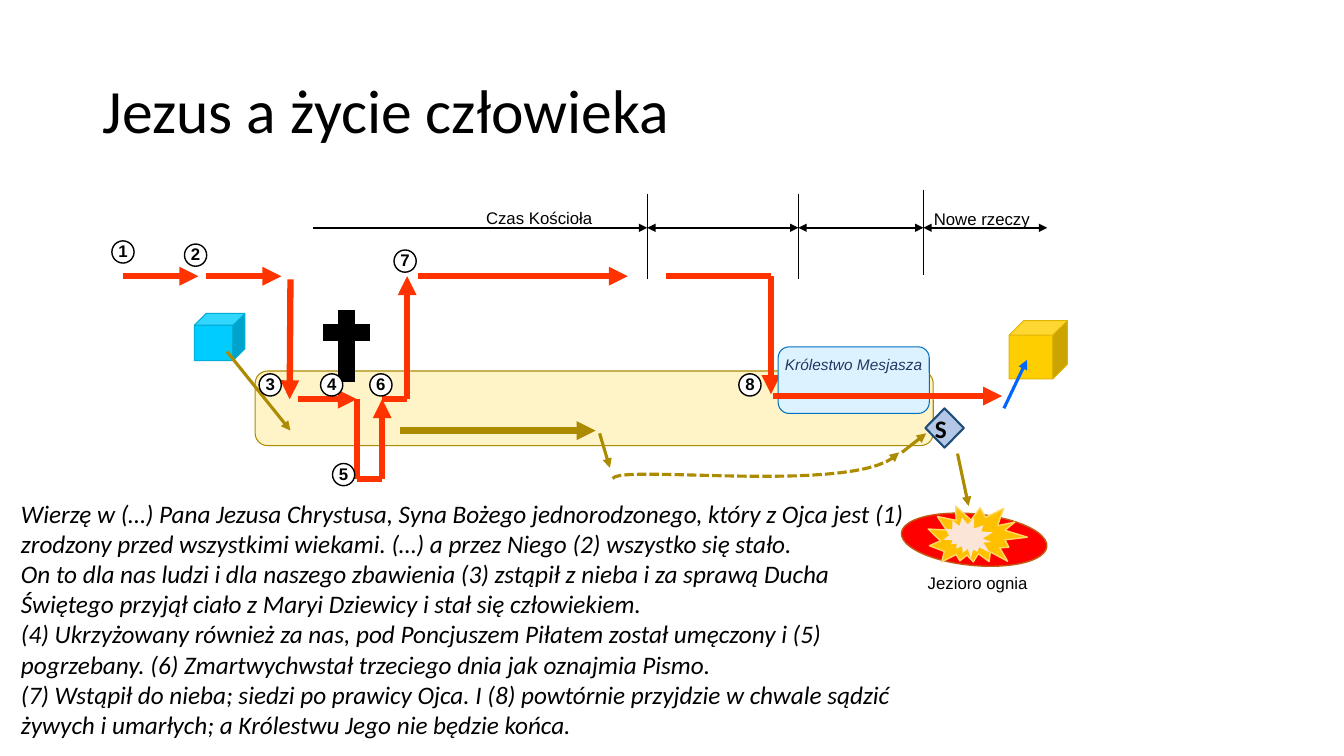
import pptx
import pptx.util
import pptx.dml.color
import pptx.enum.dml
import pptx.enum.shapes
import pptx.enum.text
import pptx.oxml.ns
import lxml.etree

Cm = pptx.util.Cm
Pt = pptx.util.Pt
SHAPE = pptx.enum.shapes.MSO_SHAPE
ALIGN = pptx.enum.text.PP_ALIGN
ANCHOR = pptx.enum.text.MSO_ANCHOR

COLORS = {
    "black": "000000", "white": "FFFFFF", "way": "FF3300", "road": "AD8B00",
    "earth": "FFF4C7", "kingdom": "DDF2FF", "kingdom_line": "0070C0", "navy": "203864",
    "judgment": "B4C7E7", "judgment_line": "1F4E79", "lake": "FF0000", "lake_line": "C55A11",
    "flame": "FFC000", "flame_line": "FFD966", "glow": "FBE5D6", "gold": "FFCE00",
    "gold_line": "E0B400", "sky": "00CCFF", "sky_line": "00AED8", "blue": "0066FF",
}
CREDO = [
    "Wierzę w (…) Pana Jezusa Chrystusa, Syna Bożego jednorodzonego, który z Ojca jest (1) "
    "zrodzony przed wszystkimi wiekami. (…) a przez Niego (2) wszystko się stało.",
    "On to dla nas ludzi i dla naszego zbawienia (3) zstąpił z nieba i za sprawą Ducha "
    "Świętego przyjął ciało z Maryi Dziewicy i stał się człowiekiem.",
    "(4) Ukrzyżowany również za nas, pod Poncjuszem Piłatem został umęczony i (5) "
    "pogrzebany. (6) Zmartwychwstał trzeciego dnia jak oznajmia Pismo.",
    "(7) Wstąpił do nieba; siedzi po prawicy Ojca. I (8) powtórnie przyjdzie w chwale sądzić "
    "żywych i umarłych; a Królestwu Jego nie będzie końca.",
]


def rgb(name):
    return pptx.dml.color.RGBColor.from_string(COLORS[name])


def style_line(line, color, width, ends=()):
    line.color.rgb = rgb(color)
    line.width = Pt(width)
    ln = line._get_or_add_ln()
    for end in ends:
        lxml.etree.SubElement(ln, pptx.oxml.ns.qn("a:" + end), type="triangle")


def add_line(s, x, y, start, end, color, width, ends=("tailEnd",)):
    c = s.shapes.add_connector(
        pptx.enum.shapes.MSO_CONNECTOR.STRAIGHT,
        Cm(x + start[0]), Cm(y + start[1]), Cm(x + end[0]), Cm(y + end[1]))
    style_line(c.line, color, width, ends)
    lxml.etree.SubElement(c._element.spPr, pptx.oxml.ns.qn("a:effectLst"))


def add_block(s, kind, x, y, w, h, fill, line=None, width=1, rotation=0):
    sp = s.shapes.add_shape(kind, Cm(x), Cm(y), Cm(w), Cm(h))
    sp.shadow.inherit = False
    sp.rotation = rotation
    sp.fill.solid()
    sp.fill.fore_color.rgb = rgb(fill)
    if line:
        style_line(sp.line, line, width)
    else:
        sp.line.fill.background()
    return sp


def format_text(tf, size, font="Arial", color="black", align=ALIGN.CENTER,
                anchor=ANCHOR.MIDDLE, margin=None, wrap=True, bold=False, italic=False):
    tf.word_wrap = wrap
    tf.vertical_anchor = anchor
    if margin is not None:
        tf.margin_left = tf.margin_right = tf.margin_top = tf.margin_bottom = Cm(margin)
    for p in tf.paragraphs:
        p.alignment = align
        for r in p.runs:
            r.font.size = Pt(size)
            r.font.name = font
            r.font.bold = bold
            r.font.italic = italic
            r.font.color.rgb = rgb(color)


def add_label(s, x, y, w, text):
    tf = s.shapes.add_textbox(Cm(x), Cm(y), Cm(w), Cm(0.66)).text_frame
    tf.text = text
    format_text(tf, 12, margin=0.08)


def add_title(s, x, y, w, h):
    sp = s.shapes.title
    sp.left, sp.top, sp.width, sp.height = Cm(x), Cm(y), Cm(w), Cm(h)
    sp.text_frame.text = "Jezus a życie człowieka"
    format_text(sp.text_frame, 44, "Calibri", align=ALIGN.LEFT)
    sp.text_frame.paragraphs[0].line_spacing = 0.9


def add_credo(s, x, y, w, h):
    tf = s.shapes.add_textbox(Cm(x), Cm(y), Cm(w), Cm(h)).text_frame
    tf.text = "\n".join(CREDO)
    format_text(tf, 18, "Calibri", align=ALIGN.LEFT, anchor=ANCHOR.TOP, italic=True)


def add_human_road(s, x, y, w, h):
    add_block(s, SHAPE.ROUNDED_RECTANGLE, x, y, w, h, "earth", "road", 0.75)
    add_line(s, x, y, (3.65, 1.5), (8.58, 1.5), "road", 4.5)
    a, b, c, d = (9.01, 2.71), (9.19, 2.33), (15.34, 3.15), (16.23, 2.05)
    steps = 24
    curve = []
    for i in range(steps + 1):
        t = i / steps
        u = 1 - t
        px, py = (u**3 * a[k] + 3 * u * u * t * b[k] + 3 * u * t * t * c[k] + t**3 * d[k]
                  for k in (0, 1))
        curve.append((Cm(x + px), Cm(y + py)))
    fb = s.shapes.build_freeform(*curve[0])
    fb.add_line_segments(curve[1:], close=False)
    sp = fb.convert_to_shape()
    sp.shadow.inherit = False
    sp.fill.background()
    sp.line.dash_style = pptx.enum.dml.MSO_LINE.SQUARE_DOT
    style_line(sp.line, "road", 2.25, ("tailEnd",))
    sp = add_block(s, SHAPE.DIAMOND, x + 16.89, y + 0.94, 0.97, 0.99,
                   "judgment", "judgment_line", 1.5)
    sp.text_frame.text = "S"
    format_text(sp.text_frame, 18, "Calibri", align=ALIGN.LEFT, margin=0, bold=True)
    for start, end in [((8.68, 1.57), (8.94, 2.44)), ((16.3, 2.05), (16.91, 1.57)),
                       ((17.7, 2.08), (17.98, 3.4))]:
        add_line(s, x, y, start, end, "road", 2.25)


def add_timeline(s, x, y):
    axis = 0.96
    marks = [0, 8.41, 12.22, 15.37, 18.49]
    for i, (left, right) in enumerate(zip(marks, marks[1:])):
        ends = ("headEnd", "tailEnd") if i else ("tailEnd",)
        add_line(s, x, y, (left, axis), (right, axis), "black", 1.5, ends)
    for mark, top in zip(marks[1:4], (0.1, 0.1, 0)):
        add_line(s, x, y, (mark, top), (mark, top + 2.16), "black", 0.5, ())
    add_label(s, x + 3.86, y + 0.38, 3.66, "Czas Kościoła")
    add_label(s, x + marks[3], y + 0.4, 2.95, "Nowe rzeczy")


def add_lake(s, x, y, w, h):
    add_block(s, SHAPE.FLOWCHART_CONNECTOR, x, y, w, h, "lake", "lake_line", 1, 5.4)
    add_block(s, SHAPE.EXPLOSION2, x + 0.68, y - 0.3, 2.46, 1.73,
              "flame", "flame_line", 1, 16.2)
    add_block(s, SHAPE.EXPLOSION2, x + 1.12, y + 0.03, 1.19, 1.14, "glow", rotation=56.2)
    add_label(s, x + 0.1, y + 1.4, 3.66, "Jezioro ognia")


def add_world(s, x, y, w, h, color, start, end, arrow):
    add_block(s, SHAPE.CUBE, x, y, w, h, color, color + "_line", 0.75)
    add_line(s, x, y, start, end, arrow, 2.25)


def add_way(s, x, y):
    ground, grave = 3.1, 5.11
    arrows = [
        ((0, 0), (1.9, 0)), ((2.08, 0), (3.99, 0)), ((4.22, 0.08), (4.2, ground)),
        ((4.42, ground), (5.89, ground)), ((6.53, grave), (6.53, ground)),
        ((7.16, ground), (7.16, 0)), ((7.44, 0), (12.72, 0)), ((16.33, 0), (16.33, 2.97)),
    ]
    plain = [
        ((5.89, ground), (5.89, grave)), ((5.89, grave), (6.53, grave)),
        ((6.53, ground), (7.16, ground)), ((13.69, 0), (16.33, 0)),
    ]
    for start, end in arrows:
        add_line(s, x, y, start, end, "way", 4.5)
    for start, end in plain:
        add_line(s, x, y, start, end, "way", 4.5, ())


def add_kingdom(s, x, y, w, h):
    sp = add_block(s, SHAPE.ROUNDED_RECTANGLE, x, y, w, h, "kingdom", "kingdom_line", 0.75)
    sp.text_frame.text = "Królestwo Mesjasza"
    format_text(sp.text_frame, 11, color="navy", anchor=ANCHOR.TOP, wrap=False, italic=True)
    add_line(s, x, y, (-0.13, 1.24), (w + 1.83, 1.24), "way", 4.5)


def add_cross(s, x, y, w, h):
    add_line(s, x, y, (0, 0.58), (w, 0.58), "black", 12, ())
    add_line(s, x, y, (w / 2, h), (w / 2, 0), "black", 12, ())


def add_badges(s, x, y):
    spots = [(0, 0), (1.83, 0.08), (3.71, 3.35), (5.26, 3.35),
             (5.56, 5.61), (6.5, 3.35), (7.11, 0.23), (15.8, 3.35)]
    for number, (dx, dy) in enumerate(spots, 1):
        sp = add_block(s, SHAPE.OVAL, x + dx, y + dy, 0.56, 0.56, "white", "black", 1)
        sp.text_frame.text = str(number)
        format_text(sp.text_frame, 12, wrap=False, bold=True)
        sp.text_frame.paragraphs[0].line_spacing = 0.9


def main():
    prs = pptx.Presentation()
    prs.slide_width, prs.slide_height = Cm(33.87), Cm(19.05)
    s = prs.slides.add_slide(prs.slide_layouts[5])
    add_title(s, 2.34, 1.02, 29.21, 3.68)
    add_human_road(s, 6.43, 9.35, 17.09, 1.88)
    add_timeline(s, 7.9, 4.78)
    add_lake(s, 22.71, 12.95, 3.68, 1.3)
    add_world(s, 25.43, 8.08, 1.47, 1.47, "gold", (-0.13, 2.21), (0.45, 0.99), "blue")
    add_world(s, 4.9, 7.9, 1.27, 1.19, "sky", (0.82, 0.96), (2.42, 2.95), "road")
    add_credo(s, 0.28, 12.42, 23.11, 6.4)
    add_way(s, 3.1, 6.96)
    add_kingdom(s, 19.61, 8.74, 3.81, 1.68)
    add_cross(s, 8.13, 7.8, 1.19, 1.83)
    add_badges(s, 2.82, 6.07)
    prs.save("out.pptx")


if __name__ == "__main__":
    main()
